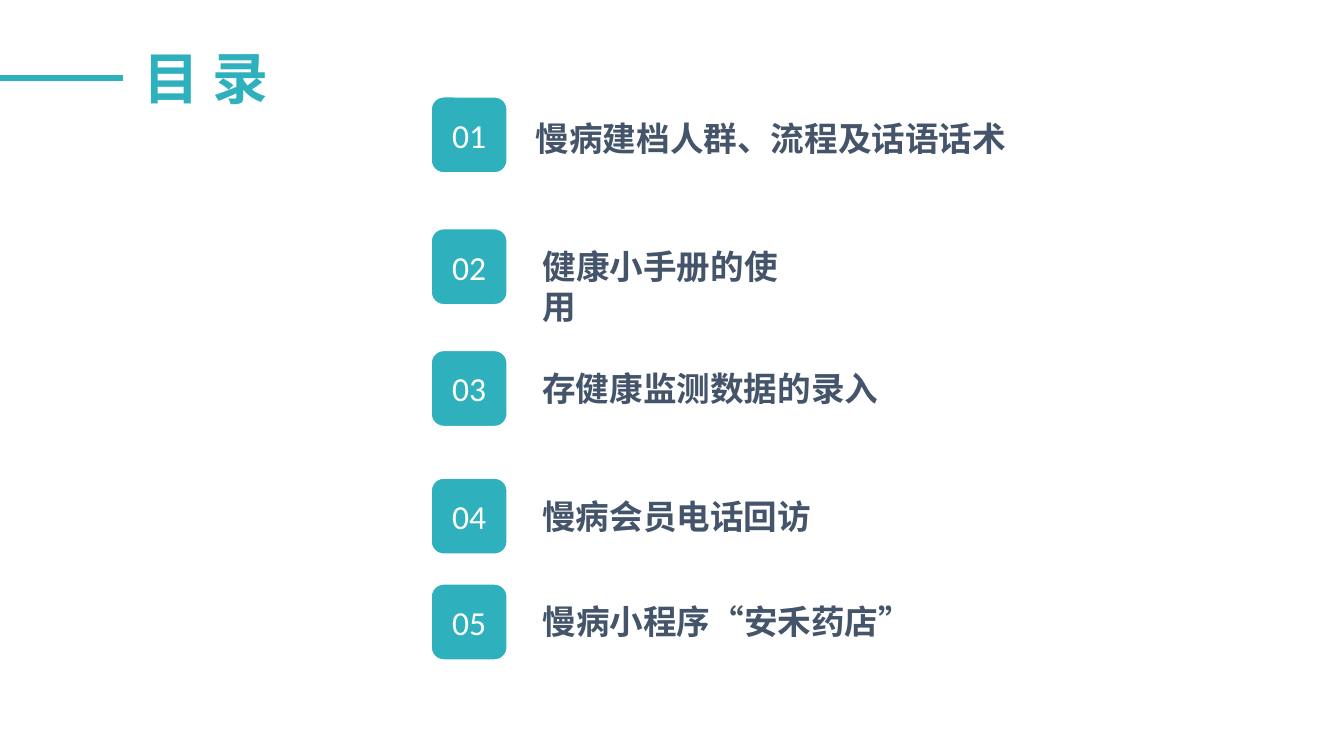
from lxml import etree
from pptx import Presentation, util as u
from pptx.dml.color import RGBColor
from pptx.enum import shapes, text
from pptx.oxml.ns import qn

PX = 5715  # 160 px to the inch
TEAL = RGBColor(0x2E, 0xB0, 0xBD)
SLATE = RGBColor(0x44, 0x54, 0x6A)
WHITE = RGBColor(0xFF, 0xFF, 0xFF)
HAN = "Noto Sans CJK SC"


def write(shape, words, size=18, font=HAN, color=SLATE, bold=True,
          align=text.PP_ALIGN.LEFT, anchor=text.MSO_ANCHOR.TOP, wrap=False):
    frame = shape.text_frame
    frame.word_wrap = wrap
    frame.vertical_anchor = anchor
    para = frame.paragraphs[0]
    para.alignment = align
    run = para.add_run()
    run.text = words
    run.font.size = u.Pt(size)
    run.font.name = font
    run.font.bold = bold
    run.font.color.rgb = color
    east = etree.SubElement(run.font._element, qn("a:ea"))
    east.set("typeface", font)


deck = Presentation()
deck.slide_width, deck.slide_height = 1600 * PX, 900 * PX
slide = deck.slides.add_slide(deck.slide_layouts[6])
items = slide.shapes

# Heading
title = items.add_textbox(155 * PX, 44 * PX, 186 * PX, 96 * PX)
write(title, "目 录", size=30, color=TEAL)
rule = items.add_connector(shapes.MSO_CONNECTOR.STRAIGHT, 0, 93 * PX, 146 * PX, 93 * PX)
rule.line.color.rgb = TEAL
rule.line.width = u.Pt(3)
etree.SubElement(rule._element.spPr, qn("a:effectLst"))

# Contents: badge top, label left, top and width, wrap, label
rows = [
    (115, 622, 133, 592, False, "慢病建档人群、流程及话语话术"),
    (272, 630, 285, 346, True, "健康小手册的使用"),
    (417, 630, 430, 432, False, "存健康监测数据的录入"),
    (569, 630, 582, 352, False, "慢病会员电话回访"),
    (695, 630, 708, 472, False, "慢病小程序“安禾药店”"),
]
for num, (top, left, y, width, wrap, words) in enumerate(rows, 1):
    badge = items.add_shape(shapes.MSO_SHAPE.ROUNDED_RECTANGLE,
                            513 * PX, top * PX, 91 * PX, 91 * PX)
    badge.shadow.inherit = False
    badge.fill.solid()
    badge.fill.fore_color.rgb = TEAL
    badge.line.color.rgb = WHITE
    badge.line.width = u.Pt(1)
    write(badge, f"{num:02}", font="Calibri", color=WHITE, bold=False,
          align=text.PP_ALIGN.CENTER, anchor=text.MSO_ANCHOR.MIDDLE, wrap=True)
    label = items.add_textbox(left * PX, y * PX, width * PX, 64 * PX)
    write(label, words, wrap=wrap)

deck.save("out.pptx")
